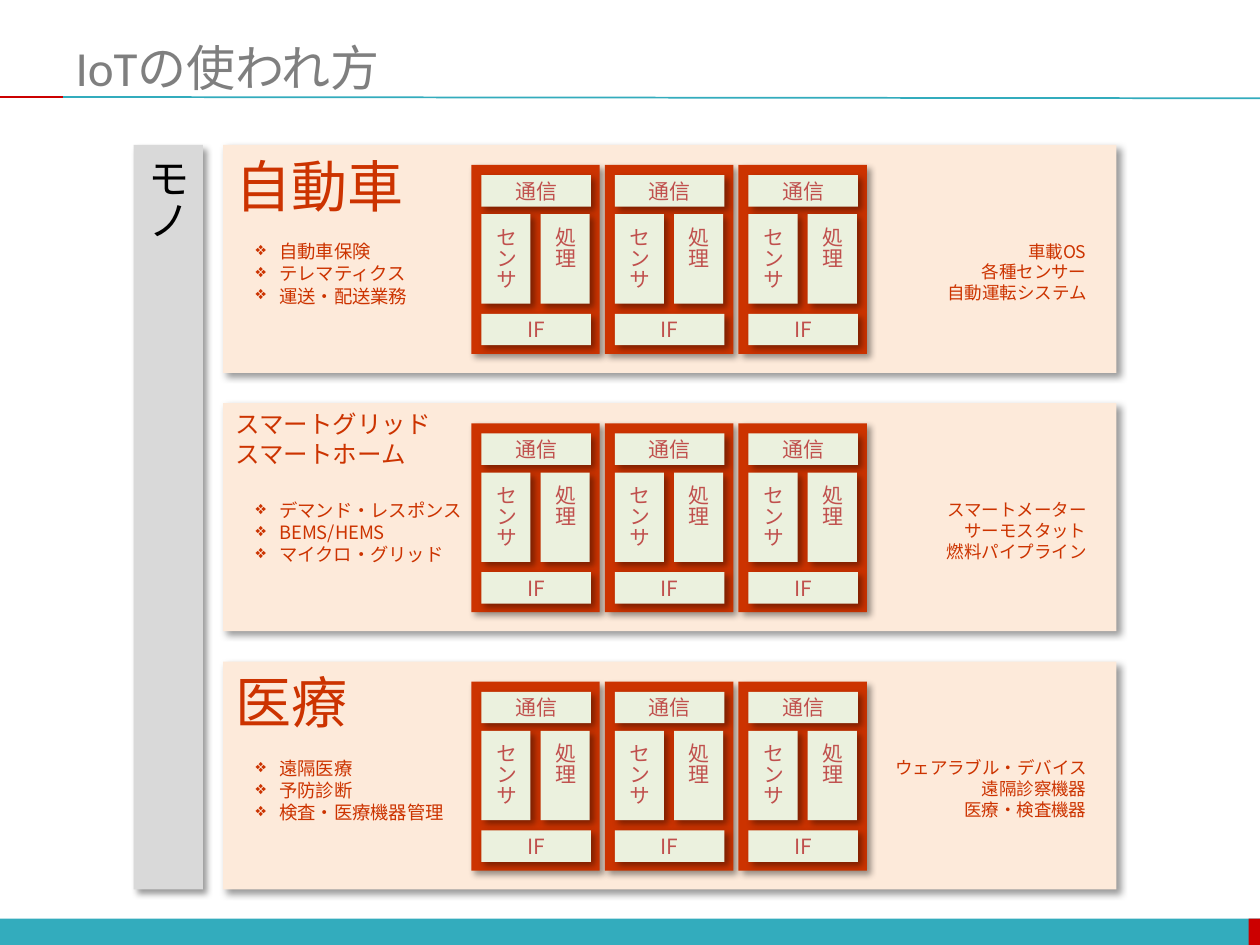
from lxml import etree
from pptx import Presentation
from pptx.dml.color import RGBColor
from pptx.enum.shapes import MSO_CONNECTOR, MSO_SHAPE
from pptx.enum.text import MSO_ANCHOR, MSO_AUTO_SIZE, PP_ALIGN
from pptx.oxml import parse_xml
from pptx.oxml.ns import nsdecls, qn
from pptx.util import Inches, Pt

RECTANGLE = MSO_SHAPE.RECTANGLE
STRAIGHT = MSO_CONNECTOR.STRAIGHT
MIDDLE = MSO_ANCHOR.MIDDLE
FIT_SHAPE = MSO_AUTO_SIZE.SHAPE_TO_FIT_TEXT
LEFT, CENTER, RIGHT = PP_ALIGN.LEFT, PP_ALIGN.CENTER, PP_ALIGN.RIGHT

TEAL = RGBColor(0x33, 0xAC, 0xBD)
RED = RGBColor(0xCC, 0x00, 0x00)
TITLE_GRAY = RGBColor(0x7F, 0x7F, 0x7F)
THING_GRAY = RGBColor(0xD9, 0xD9, 0xD9)
BLACK = RGBColor(0x00, 0x00, 0x00)
PEACH = RGBColor(0xFD, 0xEA, 0xDA)
RUST = RGBColor(0xCC, 0x33, 0x00)
PALE_GREEN = RGBColor(0xEB, 0xF1, 0xDE)
BRICK = RGBColor(0xC0, 0x50, 0x4D)

JAPANESE_FONT = "Noto Sans CJK JP"
LINE_HEIGHT = 1.2  # line pitch as a multiple of the text size

# Content
TITLE = "IoTの使われ方"
THING_LABEL = "モノ"
FIELDS = [
    {"heading": "自動車", "heading_size": 32, "heading_box": (1.55, 0.64),
     "services": ["自動車保険", "テレマティクス", "運送・配送業務"], "services_width": 1.42,
     "devices": ["車載OS", "各種センサー", "自動運転システム"]},
    {"heading": "スマートグリッド\nスマートホーム", "heading_size": 14, "heading_box": (1.77, 0.57),
     "services": ["デマンド・レスポンス", "BEMS/HEMS", "マイクロ・グリッド"], "services_width": 1.86,
     "devices": ["スマートメーター", "サーモスタット", "燃料パイプライン"]},
    {"heading": "医療", "heading_size": 32, "heading_box": (1.1, 0.64),
     "services": ["遠隔医療", "予防診断", "検査・医療機器管理"], "services_width": 1.73,
     "devices": ["ウェアラブル・デバイス", "遠隔診察機器", "医療・検査機器"]},
]
# Part of a module: label, offset and size inside the module, vertical text
MODULE_PARTS = [
    ("通信", 0.08, 0.08, 0.87, 0.25, False),
    ("センサ", 0.08, 0.39, 0.39, 0.71, True),
    ("IF", 0.08, 1.18, 0.87, 0.25, False),
    ("処理", 0.55, 0.39, 0.39, 0.71, True),
]

# Layout
FIELD_LEFT, FIELD_TOP, FIELD_WIDTH, FIELD_HEIGHT = 1.77, 1.15, 7.09, 1.81
FIELD_PITCH = 2.05
MODULE_LEFT, MODULE_INSET = 3.74, 0.16
MODULE_WIDTH, MODULE_HEIGHT = 1.02, 1.5
MODULE_COUNT, MODULE_GAP = 3, 0.04
LIST_INSET = 0.71

SHADOW = (f'<a:effectLst {nsdecls("a")}><a:outerShdw blurRad="50800" dist="38100" '
          'dir="2700000" algn="tl" rotWithShape="0"><a:srgbClr val="000000">'
          '<a:alpha val="40000"/></a:srgbClr></a:outerShdw></a:effectLst>')


def format_text(frame, size, color, align):
    for paragraph in frame.paragraphs:
        paragraph.alignment = align
        paragraph.line_spacing = Pt(size * LINE_HEIGHT)
        for run in paragraph.runs:
            run.font.size = Pt(size)
            run.font.color.rgb = color
            run.font.name = JAPANESE_FONT
            east_asian = etree.SubElement(run.font._element, qn("a:ea"))
            east_asian.set("typeface", JAPANESE_FONT)


def add_panel(left, top, width, height, fill, shadow=True):
    panel = slide.shapes.add_shape(RECTANGLE, Inches(left), Inches(top), Inches(width), Inches(height))
    panel.shadow.inherit = False
    panel.fill.solid()
    panel.fill.fore_color.rgb = fill
    panel.line.fill.background()
    if shadow:
        properties = panel._element.spPr
        properties.replace(properties.find(qn("a:effectLst")), parse_xml(SHADOW))
    return panel


def label_panel(panel, label, size, color, vertical):
    frame = panel.text_frame
    frame.text = label
    frame.vertical_anchor = MIDDLE
    frame.margin_left = frame.margin_right = 0
    if vertical:
        frame._txBody.bodyPr.set("vert", "eaVert")
    format_text(frame, size, color, LEFT if vertical else CENTER)


def add_text(text, left, top, width, height, size, align=LEFT, wrap=False):
    box = slide.shapes.add_textbox(Inches(left), Inches(top), Inches(width), Inches(height))
    frame = box.text_frame
    frame.text = text
    frame.word_wrap = wrap
    frame.auto_size = FIT_SHAPE
    format_text(frame, size, RUST, align)
    return frame


def add_bullets(frame):
    for paragraph in frame.paragraphs:
        properties = paragraph._p.get_or_add_pPr()
        properties.set("marL", str(Inches(0.19)))
        properties.set("indent", str(-Inches(0.19)))
        etree.SubElement(properties, qn("a:buChar")).set("char", "❖")


def add_rule(left, top, right, bottom, color):
    rule = slide.shapes.add_connector(STRAIGHT, Inches(left), Inches(top), Inches(right), Inches(bottom))
    rule.line.color.rgb = color
    rule.line.width = Pt(1)
    etree.SubElement(rule._element.spPr, qn("a:effectLst"))


def add_module(left, top):
    add_panel(left, top, MODULE_WIDTH, MODULE_HEIGHT, RUST)
    for label, dx, dy, width, height, vertical in MODULE_PARTS:
        part = add_panel(left + dx, top + dy, width, height, PALE_GREEN)
        label_panel(part, label, 12, BRICK, vertical)


def add_field(field, top):
    add_panel(FIELD_LEFT, top, FIELD_WIDTH, FIELD_HEIGHT, PEACH)
    for column in range(MODULE_COUNT):
        add_module(MODULE_LEFT + column * (MODULE_WIDTH + MODULE_GAP), top + MODULE_INSET)
    add_text(field["heading"], FIELD_LEFT, top, *field["heading_box"], field["heading_size"])
    list_top = top + LIST_INSET
    add_text("\n".join(field["devices"]), 6.97, list_top, 1.75, 0.61, 10, RIGHT, wrap=True)
    services = add_text("\n".join(field["services"]), 1.93, list_top,
                        field["services_width"], 0.63, 10.5)
    add_bullets(services)


presentation = Presentation()
presentation.slide_width, presentation.slide_height = Inches(10), Inches(7.5)
slide = presentation.slides.add_slide(presentation.slide_layouts[5])

# Title, rules and footer band
title = slide.shapes.title
title.left, title.top, title.width, title.height = map(Inches, (0.5, 0.3, 9.5, 0.46))
title.text_frame.text = TITLE
title.text_frame.vertical_anchor = MIDDLE
title_paragraph = title.text_frame.paragraphs[0]
title_paragraph.alignment = LEFT
title_font = title_paragraph.runs[0].font
title_font.name, title_font.size = "Calibri", Pt(28)
title_font.color.rgb = TITLE_GRAY
add_panel(0, 7.29, 10, 0.22, TEAL, shadow=False)
add_panel(9.91, 7.29, 0.1, 0.22, RED, shadow=False)
add_rule(0.5, 0.77, 10, 0.78, TEAL)
add_rule(0, 0.77, 0.5, 0.77, RED)

# Bar of things beside the three fields of use
things = add_panel(1.06, FIELD_TOP, 0.55, 2 * FIELD_PITCH + FIELD_HEIGHT, THING_GRAY)
label_panel(things, THING_LABEL, 24, BLACK, vertical=True)
for row, field in enumerate(FIELDS):
    add_field(field, FIELD_TOP + row * FIELD_PITCH)

presentation.save("out.pptx")
